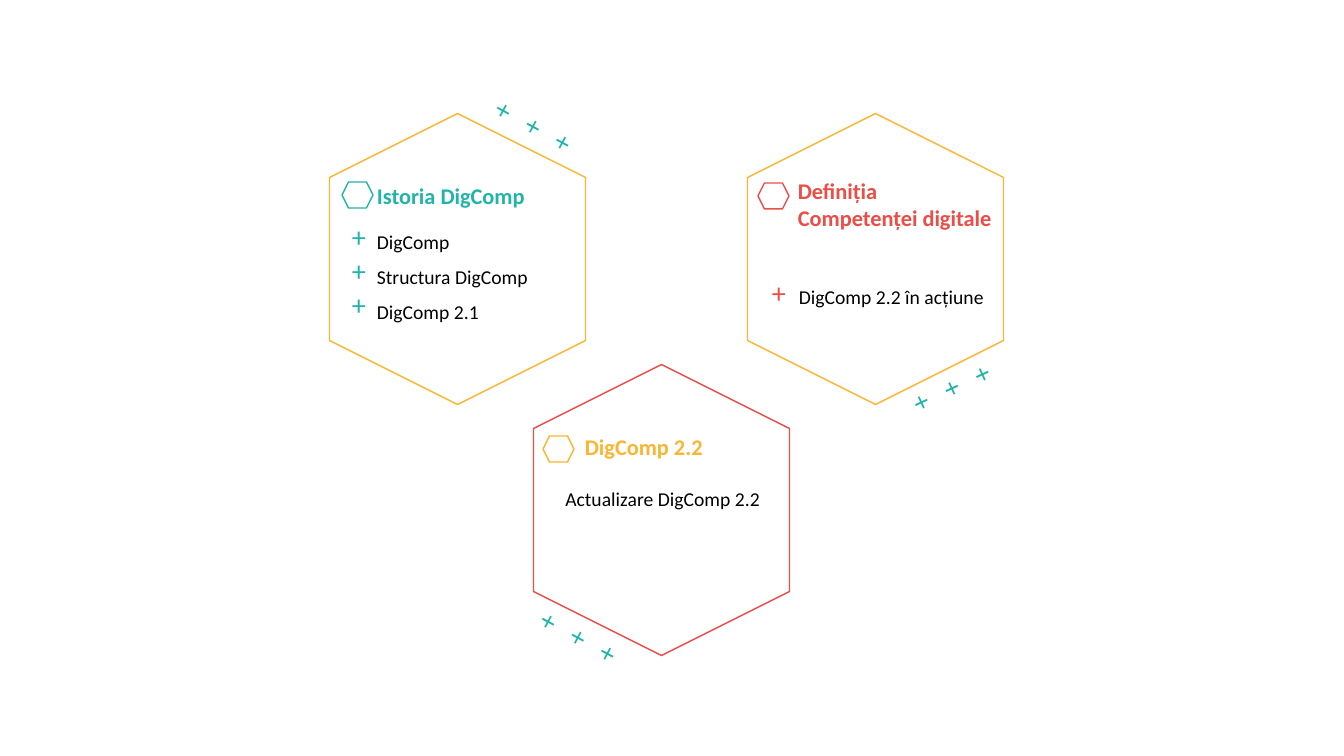
"""Build a slide of three hexagon cards that outline the DigComp topics."""
from pptx import Presentation
from pptx.dml.color import RGBColor
from pptx.enum.shapes import MSO_SHAPE
from pptx.enum.text import PP_ALIGN
from pptx.util import Pt

TEAL = RGBColor(0x21, 0xB4, 0xA9)
RED = RGBColor(0xEA, 0x4E, 0x46)
YELLOW = RGBColor(0xFA, 0xB6, 0x32)
BLACK = RGBColor(0, 0, 0)

FONT = "Calibri"
SCALE = 914400 / 100.8
PAGE_SIZE = (1344, 756)
HEXAGON_SIZE = (291, 256)
ICON_SIZE = (31, 26)

CARDS = [
    {
        "hexagon": (312, 131), "outline": YELLOW, "accent": TEAL, "icon": (342, 182),
        "title": ["Istoria DigComp"], "title_box": (367, 177, 243, 37),
        "topics": ["DigComp", "Structura DigComp", "DigComp 2.1"],
        "topics_box": (367, 213, 264, 116), "align": PP_ALIGN.LEFT,
        "bullets": "+++", "bullets_box": (342, 215, 30, 112),
        "trail_box": (512, 66, 43, 112), "trail_angle": 298.4,
    },
    {
        "hexagon": (730, 131), "outline": YELLOW, "accent": RED, "icon": (758, 183),
        "title": ["Definiția", "Competenței digitale"], "title_box": (788, 172, 215, 65),
        "topics": ["DigComp 2.2 în acțiune"],
        "topics_box": (789, 269, 225, 45), "align": PP_ALIGN.LEFT,
        "bullets": "+", "bullets_box": (762, 271, 30, 44),
        "trail_box": (927, 329, 43, 112), "trail_angle": 245.2,
    },
    {
        "hexagon": (516, 382), "outline": RED, "accent": YELLOW, "icon": (543, 436),
        "title": ["DigComp 2.2"], "title_box": (575, 428, 243, 37),
        "topics": ["Actualizare DigComp 2.2"],
        "topics_box": (506, 471, 264, 45), "align": PP_ALIGN.RIGHT,
        "bullets": "", "bullets_box": None,
        "trail_box": (557, 577, 43, 112), "trail_angle": 298.4,
    },
]


def emu(*lengths):
    return [round(length * SCALE) for length in lengths]


def add_hexagon(page, corner, size, color, angle=0):
    hexagon = page.shapes.add_shape(MSO_SHAPE.HEXAGON, *emu(*corner, *size))
    hexagon.rotation = angle
    hexagon.shadow.inherit = False
    hexagon.fill.background()
    hexagon.line.color.rgb = color
    hexagon.line.width = Pt(1)


def add_text(page, place, lines, size, color, bold=False, align=PP_ALIGN.LEFT,
             spacing=None, angle=0):
    box = page.shapes.add_textbox(*emu(*place))
    box.rotation = angle
    box.text_frame.word_wrap = True
    box.text_frame.text = "\n".join(lines)
    for para in box.text_frame.paragraphs:
        para.alignment = align
        para.line_spacing = spacing
        for span in para.runs:
            span.font.name = FONT
            span.font.size = Pt(size)
            span.font.bold = bold
            span.font.color.rgb = color


def add_card(page, card):
    accent = card["accent"]
    add_hexagon(page, card["hexagon"], HEXAGON_SIZE, card["outline"], angle=90)
    add_hexagon(page, card["icon"], ICON_SIZE, accent)
    add_text(page, card["title_box"], card["title"], 16, accent, bold=True)
    add_text(page, card["topics_box"], card["topics"], 14, BLACK,
             align=card["align"], spacing=Pt(25))
    if card["bullets"]:
        add_text(page, card["bullets_box"], [card["bullets"]], 20, accent)
    add_text(page, card["trail_box"], ["+++"], 20, TEAL, angle=card["trail_angle"])


def main():
    deck = Presentation()
    deck.slide_width, deck.slide_height = emu(*PAGE_SIZE)
    page = deck.slides.add_slide(deck.slide_layouts[6])
    for card in CARDS:
        add_card(page, card)
    deck.save("out.pptx")


if __name__ == "__main__":
    main()
